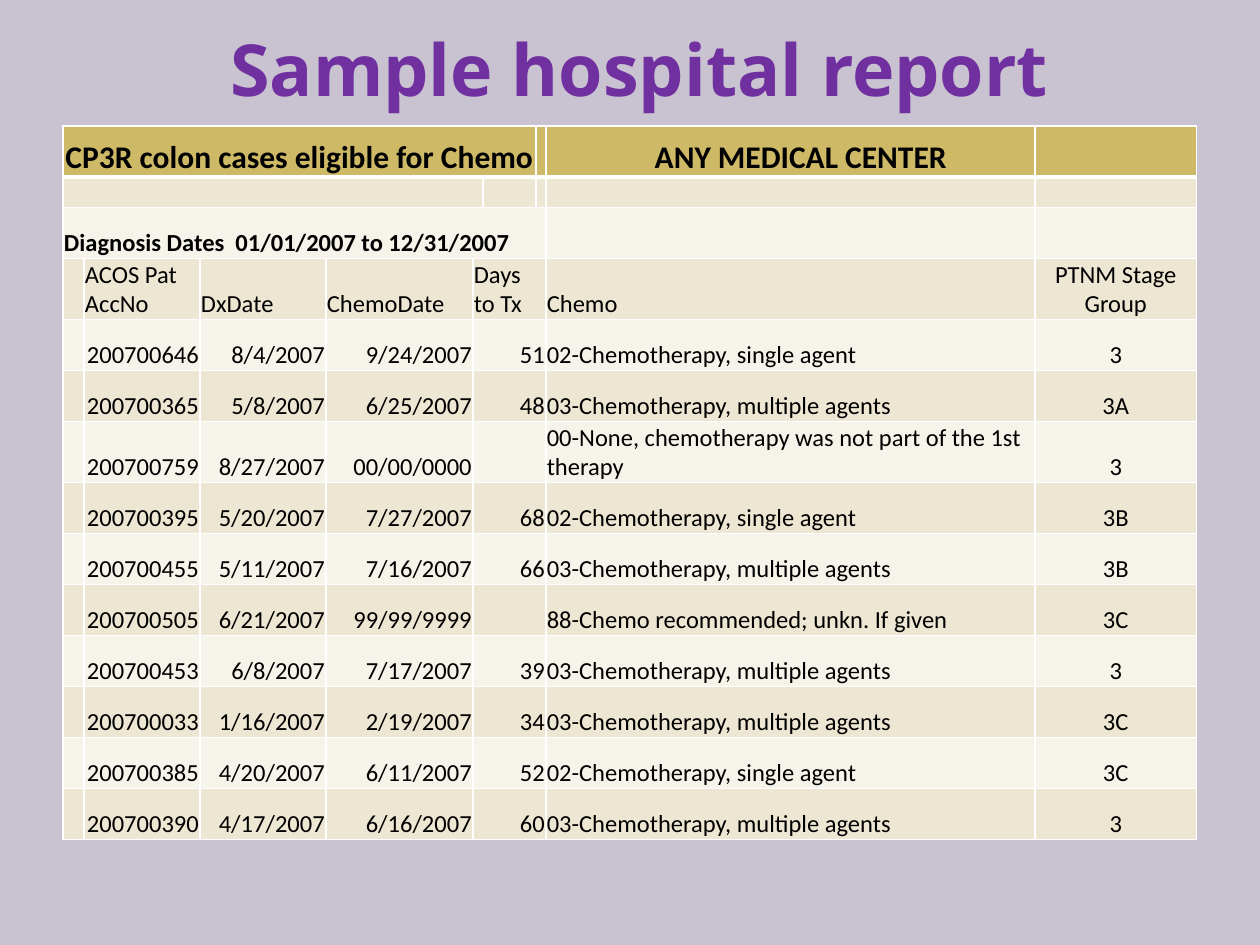
from pptx import Presentation
from pptx.dml.color import RGBColor
from pptx.enum.text import MSO_ANCHOR as ANCHOR, PP_ALIGN as ALIGN
from pptx.oxml import parse_xml
from pptx.oxml.ns import nsdecls
from pptx.util import Pt

PX = 914400 // 126
L, C, R = ALIGN.LEFT, ALIGN.CENTER, ALIGN.RIGHT


def rgb(value):
    return RGBColor.from_string(value)


def write(tf, text, size=14, font="Calibri", color="000000", bold=False, align=L):
    p = tf.paragraphs[0]
    p.alignment = align
    if not text:
        p._p.append(parse_xml(f'<a:endParaRPr {nsdecls("a")} sz="{size * 100}"/>'))
        return
    r = p.add_run()
    r.text = text
    r.font.size, r.font.name, r.font.bold = Pt(size), font, bold
    r.font.color.rgb = rgb(color)


prs = Presentation()
prs.slide_width, prs.slide_height = 1260 * PX, 945 * PX
s = prs.slides.add_slide(prs.slide_layouts[6])
s.background.fill.solid()
s.background.fill.fore_color.rgb = rgb("C9C2D1")

tf = s.shapes.add_textbox(73 * PX, 0, 1134 * PX, 136 * PX).text_frame
tf.word_wrap = True
tf.vertical_anchor = ANCHOR.MIDDLE
write(tf, "Sample hospital report", size=41, font="Open Sans", color="7030A0",
      bold=True, align=C)

headings = ["ACOS Pat AccNo", "DxDate", "ChemoDate", "Days to Tx", "Chemo",
            "PTNM Stage Group"]
single = "02-Chemotherapy, single agent"
multiple = "03-Chemotherapy, multiple agents"
cases = [
    ["200700646", "8/4/2007", "9/24/2007", "51", single, "3"],
    ["200700365", "5/8/2007", "6/25/2007", "48", multiple, "3A"],
    ["200700759", "8/27/2007", "00/00/0000", "",
     "00-None, chemotherapy was not part of the 1st therapy", "3"],
    ["200700395", "5/20/2007", "7/27/2007", "68", single, "3B"],
    ["200700455", "5/11/2007", "7/16/2007", "66", multiple, "3B"],
    ["200700505", "6/21/2007", "99/99/9999", "",
     "88-Chemo recommended; unkn. If given", "3C"],
    ["200700453", "6/8/2007", "7/17/2007", "39", multiple, "3"],
    ["200700033", "1/16/2007", "2/19/2007", "34", multiple, "3C"],
    ["200700385", "4/20/2007", "6/11/2007", "52", single, "3C"],
    ["200700390", "4/17/2007", "6/16/2007", "60", multiple, "3"],
]

content = {
    (0, 0): ("CP3R colon cases eligible for Chemo", dict(size=18, bold=True, align=C)),
    (0, 7): ("ANY MEDICAL CENTER", dict(size=18, bold=True, align=C)),
    (2, 0): ("Diagnosis Dates  01/01/2007 to 12/31/2007", dict(bold=True)),
}
columns = [1, 2, 3, 4, 7, 8]
for i, record in enumerate([headings] + cases, 3):
    aligns = [L, L, L, L, L, C] if i == 3 else [R, R, R, R, L, C]
    for j, text, align in zip(columns, record, aligns):
        content[i, j] = (text, dict(align=align))

widths = [21, 116, 126, 147, 10, 53, 10, 489, 162]
heights = [51, 30, 51, 61] + [51] * len(cases)
heights[6] = 61
table = s.shapes.add_table(len(heights), len(widths), 63 * PX, 126 * PX,
                           sum(widths) * PX, sum(heights) * PX).table
table.first_row = table.horz_banding = False
for col, width in zip(table.columns, widths):
    col.width = width * PX
for row, height in zip(table.rows, heights):
    row.height = height * PX

spans = [(0, 0, 5), (1, 0, 4), (2, 0, 6)] + [(i, 4, 6) for i in range(3, len(heights))]
for i, first, last in spans:
    table.cell(i, first).merge(table.cell(i, last))

for i in range(len(heights)):
    fill = "CEB966" if i == 0 else ("F6F3EA", "EDE6D3")[i % 2]
    for j in range(len(widths)):
        cell = table.cell(i, j)
        cell.margin_left = cell.margin_right = cell.margin_top = PX
        cell.margin_bottom = 0
        cell.vertical_anchor = ANCHOR.BOTTOM
        tcPr = cell._tc.get_or_add_tcPr()
        for side in "LRTB":
            weight = 3 if (i, side) in [(0, "B"), (1, "T")] else 1
            tcPr.append(parse_xml(
                f'<a:ln{side} {nsdecls("a")} w="{Pt(weight)}"><a:solidFill>'
                f'<a:srgbClr val="FFFFFF"/></a:solidFill></a:ln{side}>'))
        cell.fill.solid()
        cell.fill.fore_color.rgb = rgb(fill)
        text, style = content.get((i, j), ("", {}))
        write(cell.text_frame, text, **style)
table.cell(0, 7).margin_left = 22 * PX

prs.save("out.pptx")
